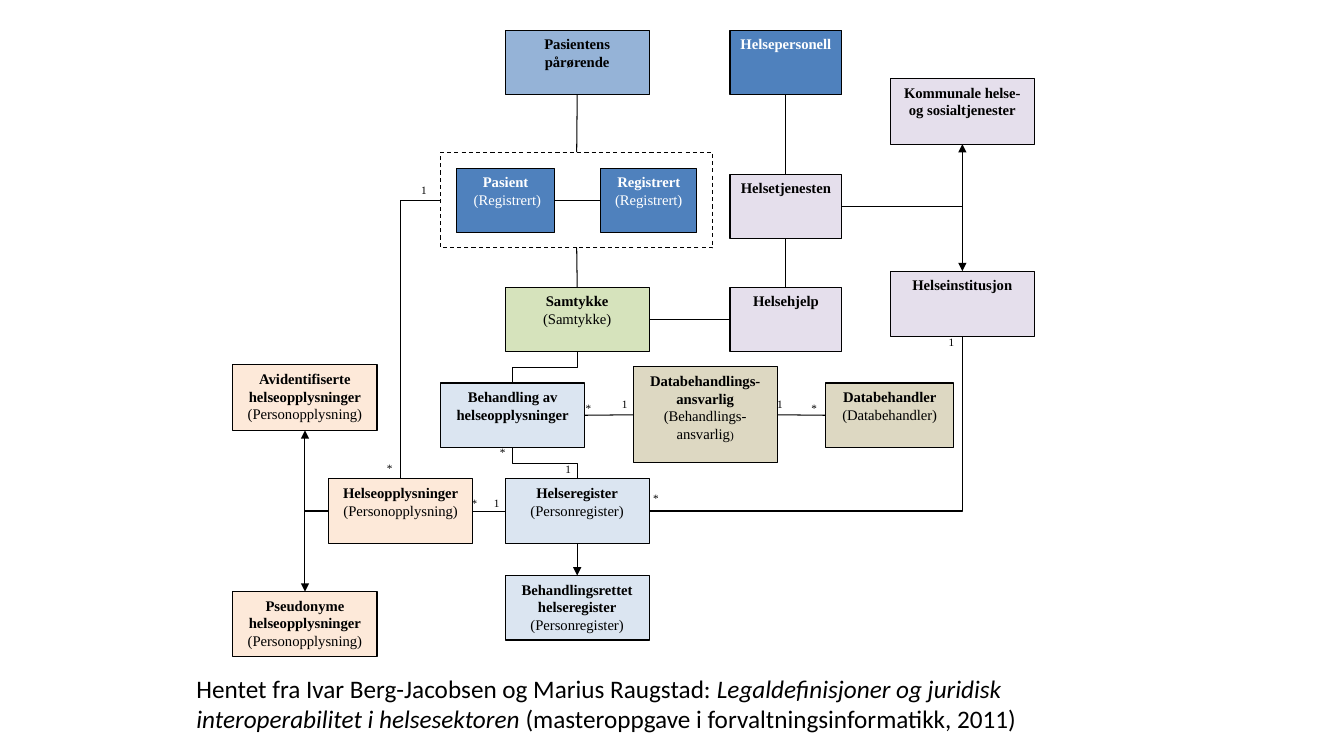
import dataclasses

import lxml.etree
import pptx
import pptx.dml.color
import pptx.enum.dml
import pptx.enum.shapes
import pptx.enum.text
import pptx.oxml.ns
import pptx.util

Inches = pptx.util.Inches
TOP, LEFT, BOTTOM, RIGHT = range(4)
STRAIGHT, CORNER, STEP = "straight", "corner", "step"
BLACK, WHITE = "000000", "FFFFFF"
BLUE, LIGHT_BLUE, PALE_BLUE = "4F81BD", "95B3D7", "DBE5F1"
PEACH, LILAC, SAND, GREEN = "FDE9D9", "E5DFEC", "DDD8C2", "D6E3BC"
SERIF = "Times New Roman"
WIDE, MEDIUM, LOW = 1.43, 1.11, 0.64
FRAME = "frame"


@dataclasses.dataclass
class Box:
    term: str
    legal_term: str
    left: float
    top: float
    fill: str
    width: float = WIDE
    height: float = LOW
    color: str = BLACK
    small_ending: str = ""


@dataclasses.dataclass
class Link:
    start: str
    start_side: int
    end: str
    end_side: int
    route: str = STRAIGHT
    arrow: bool = False


@dataclasses.dataclass
class Label:
    text: str
    left: float
    top: float


BOXES = [
    Box("Pasient", " (Registrert)", 4.53, 1.67, BLUE, 0.97, color=WHITE),
    Box("Registrert", "(Registrert)", 5.96, 1.67, BLUE, 0.95, color=WHITE),
    Box("Pasientens pårørende", "", 5.01, 0.3, LIGHT_BLUE),
    Box("Helsepersonell", "", 7.24, 0.3, BLUE, MEDIUM, color=WHITE),
    Box("Helsetjenesten", "", 7.24, 1.73, LILAC, MEDIUM),
    Box("Helsehjelp", "", 7.24, 2.85, LILAC, MEDIUM),
    Box("Kommunale helse- og sosialtjenester", "", 8.83, 0.78, LILAC, height=0.65),
    Box("Helseinstitusjon", "", 8.83, 2.69, LILAC, height=0.65),
    Box("Samtykke", "(Samtykke)", 5.01, 2.85, GREEN),
    Box("Behandling av helseopplysninger", "", 4.37, 3.8, PALE_BLUE),
    Box("Helseregister", "(Personregister)", 5.01, 4.75, PALE_BLUE),
    Box("Behandlingsrettet helseregister", "(Personregister)", 5.01, 5.71, PALE_BLUE),
    Box("Databehandlings-ansvarlig", "(Behandlings-ansvarlig", 6.28, 3.64, SAND,
        height=0.95, small_ending=")"),
    Box("Databehandler", "(Databehandler)", 8.19, 3.8, SAND, 1.27),
    Box("Helseopplysninger", "(Personopplysning)", 3.26, 4.75, PEACH),
    Box("Avidentifiserte helseopplysninger", "(Personopplysning)", 2.31, 3.62, PEACH,
        height=0.65),
    Box("Pseudonyme helseopplysninger", "(Personopplysning)", 2.31, 5.87, PEACH),
]

LINKS = [
    Link("Pasientens pårørende", BOTTOM, FRAME, TOP),
    Link("Pasient", RIGHT, "Registrert", LEFT),
    Link(FRAME, BOTTOM, "Samtykke", TOP),
    Link("Samtykke", RIGHT, "Helsehjelp", LEFT),
    Link("Helsetjenesten", TOP, "Helsepersonell", BOTTOM),
    Link("Helsetjenesten", BOTTOM, "Helsehjelp", TOP),
    Link("Behandling av helseopplysninger", RIGHT, "Databehandlings-ansvarlig", LEFT),
    Link("Databehandlings-ansvarlig", RIGHT, "Databehandler", LEFT),
    Link("Helseregister", LEFT, "Helseopplysninger", RIGHT),
    Link("Helseregister", BOTTOM, "Behandlingsrettet helseregister", TOP, arrow=True),
    Link("Helsetjenesten", RIGHT, "Helseinstitusjon", TOP, CORNER, True),
    Link("Helsetjenesten", RIGHT, "Kommunale helse- og sosialtjenester", BOTTOM, CORNER, True),
    Link("Helseopplysninger", LEFT, "Avidentifiserte helseopplysninger", BOTTOM, CORNER, True),
    Link("Helseopplysninger", LEFT, "Pseudonyme helseopplysninger", TOP, CORNER, True),
    Link("Helseregister", RIGHT, "Helseinstitusjon", BOTTOM, CORNER),
    Link(FRAME, LEFT, "Helseopplysninger", TOP, CORNER),
    Link("Samtykke", BOTTOM, "Behandling av helseopplysninger", TOP, STEP),
    Link("Behandling av helseopplysninger", BOTTOM, "Helseregister", TOP, STEP),
]

LABELS = [
    Label("1", 9.31, 3.28), Label("*", 6.38, 4.83), Label("1", 4.8, 4.87),
    Label("*", 4.58, 4.87), Label("*", 4.86, 4.37), Label("1", 5.51, 4.54),
    Label("1", 6.07, 3.89), Label("*", 5.71, 3.93), Label("1", 4.08, 1.77),
    Label("*", 3.74, 4.53), Label("1", 7.61, 3.89), Label("*", 7.95, 3.93),
]

CAPTION = [
    [("Hentet fra Ivar Berg-Jacobsen og Marius Raugstad: ", False),
     ("Legaldefinisjoner og juridisk", True)],
    [("interoperabilitet i helsesektoren ", True),
     ("(masteroppgave i forvaltningsinformatikk, 2011)", False)],
]


def rgb(color: str) -> pptx.dml.color.RGBColor:
    return pptx.dml.color.RGBColor.from_string(color)


def add_run(paragraph, text: str, size: float, color: str = BLACK, **formats) -> None:
    run = paragraph.add_run()
    run.text = text
    values = {"name": SERIF, "size": pptx.util.Pt(size), **formats}
    for attribute, value in values.items():
        setattr(run.font, attribute, value)
    run.font.color.rgb = rgb(color)


def format_line(line) -> None:
    line.color.rgb = rgb(BLACK)
    line.width = pptx.util.Pt(0.75)


def add_rectangle(slide, left: float, top: float, width: float, height: float):
    shape = slide.shapes.add_shape(
        pptx.enum.shapes.MSO_SHAPE.RECTANGLE,
        Inches(left), Inches(top), Inches(width), Inches(height))
    shape.shadow.inherit = False
    format_line(shape.line)
    return shape


def add_box(slide, box: Box):
    shape = add_rectangle(slide, box.left, box.top, box.width, box.height)
    shape.fill.solid()
    shape.fill.fore_color.rgb = rgb(box.fill)
    frame = shape.text_frame
    frame.word_wrap = True
    frame.vertical_anchor = pptx.enum.text.MSO_ANCHOR.TOP
    paragraph = frame.paragraphs[0]
    add_run(paragraph, box.term, 10.5, box.color, bold=True)
    if box.legal_term:
        paragraph = frame.add_paragraph()
        add_run(paragraph, box.legal_term, 10.5, box.color)
    if box.small_ending:
        add_run(paragraph, box.small_ending, 8, box.color)
    for paragraph in frame.paragraphs:
        paragraph.alignment = pptx.enum.text.PP_ALIGN.CENTER
    return shape


def side_middle(shape, side: int) -> tuple[int, int]:
    across = {LEFT: 0, RIGHT: shape.width}.get(side, shape.width // 2)
    down = {TOP: 0, BOTTOM: shape.height}.get(side, shape.height // 2)
    return shape.left + across, shape.top + down


def add_link(slide, link: Link, shapes: dict) -> None:
    start, end = shapes[link.start], shapes[link.end]
    x1, y1 = side_middle(start, link.start_side)
    x2, y2 = side_middle(end, link.end_side)
    if link.route == STEP:
        # A step leaves vertically: lay it out on its side, then turn it 90 degrees
        middle_x, middle_y = (x1 + x2) // 2, (y1 + y2) // 2
        half_x, half_y = (x2 - x1) // 2, (y2 - y1) // 2
        x1, y1 = middle_x - half_y, middle_y + half_x
        x2, y2 = middle_x + half_y, middle_y - half_x
    kinds = pptx.enum.shapes.MSO_CONNECTOR
    kind = kinds.STRAIGHT if link.route == STRAIGHT else kinds.ELBOW
    connector = slide.shapes.add_connector(kind, x1, y1, x2, y2)
    format_line(connector.line)
    properties = connector._element.spPr
    if link.route == STRAIGHT:
        connector.begin_connect(start, link.start_side)
        connector.end_connect(end, link.end_side)
    elif link.route == CORNER:
        properties.find(pptx.oxml.ns.qn("a:prstGeom")).set("prst", "bentConnector2")
    else:
        properties.find(pptx.oxml.ns.qn("a:xfrm")).set("rot", str(90 * 60000))
    if link.arrow:
        lxml.etree.SubElement(
            connector.line._get_or_add_ln(), pptx.oxml.ns.qn("a:tailEnd"), type="triangle")
    lxml.etree.SubElement(properties, pptx.oxml.ns.qn("a:effectLst"))


def add_text_frame(slide, left: float, top: float, width: float, height: float):
    text_box = slide.shapes.add_textbox(
        Inches(left), Inches(top), Inches(width), Inches(height))
    text_box.text_frame.word_wrap = True
    return text_box.text_frame


def main() -> None:
    presentation = pptx.Presentation()
    presentation.slide_width, presentation.slide_height = Inches(13.33), Inches(7.5)
    slide = presentation.slides.add_slide(presentation.slide_layouts[6])

    # Concepts, and the dashed frame around the registered persons
    shapes = {box.term: add_box(slide, box) for box in BOXES}
    shapes[FRAME] = add_rectangle(slide, 4.37, 1.51, 2.7, 0.95)
    shapes[FRAME].fill.background()
    shapes[FRAME].line.dash_style = pptx.enum.dml.MSO_LINE.DASH

    # Relations and their multiplicities
    for link in LINKS:
        add_link(slide, link, shapes)
    for label in LABELS:
        frame = add_text_frame(slide, label.left, label.top, 0.36, 0.36)
        add_run(frame.paragraphs[0], label.text, 8)

    # Source caption
    frame = add_text_frame(slide, 1.85, 6.63, 8.45, 0.71)
    for paragraph, runs in zip([frame.paragraphs[0], frame.add_paragraph()], CAPTION):
        for text, italic in runs:
            add_run(paragraph, text, 18, name="Calibri", italic=italic)

    presentation.save("out.pptx")


if __name__ == "__main__":
    main()
